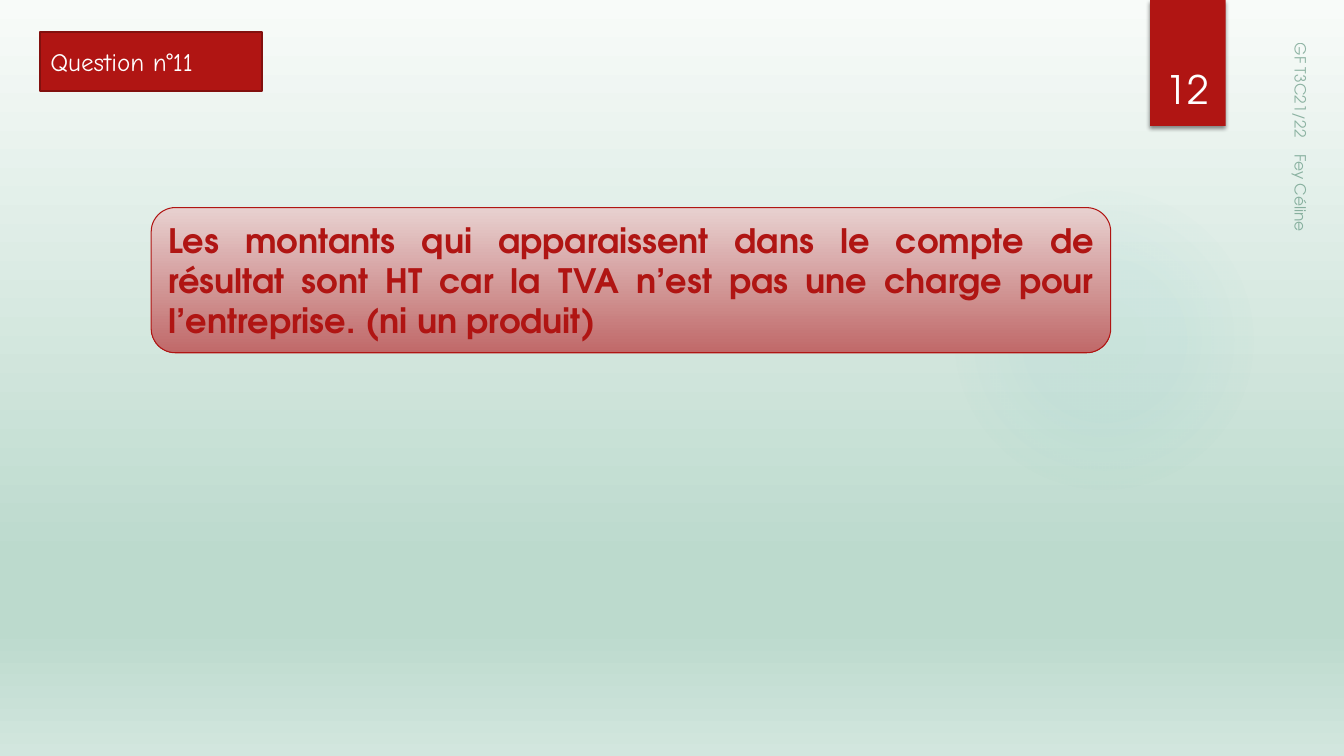
from lxml import etree
from pptx import Presentation
from pptx.dml.color import RGBColor
from pptx.enum.shapes import MSO_SHAPE
from pptx.enum.text import MSO_ANCHOR, MSO_AUTO_SIZE, PP_ALIGN
from pptx.oxml import parse_xml
from pptx.oxml.ns import nsdecls, qn
from pptx.util import Pt

ROUNDED, RECTANGLE, ELLIPSE = MSO_SHAPE.ROUNDED_RECTANGLE, MSO_SHAPE.RECTANGLE, MSO_SHAPE.OVAL
MIDDLE, BOTTOM = MSO_ANCHOR.MIDDLE, MSO_ANCHOR.BOTTOM
LEFT, CENTER, JUSTIFY = PP_ALIGN.LEFT, PP_ALIGN.CENTER, PP_ALIGN.JUSTIFY
NO_AUTOFIT = MSO_AUTO_SIZE.NONE

RED = RGBColor(0xB0, 0x15, 0x13)
DARK_RED = RGBColor(0x82, 0x10, 0x0E)
PALE_ROSE = RGBColor(0xE8, 0xD1, 0xD0)
ROSE = RGBColor(0xC0, 0x69, 0x69)
WHITE = RGBColor(0xFF, 0xFF, 0xFF)
BLACK = RGBColor(0, 0, 0)
MIST = RGBColor(0xF8, 0xFB, 0xF9)
SAGE = RGBColor(0xBC, 0xDA, 0xCD)
PALE_SAGE = RGBColor(0xD2, 0xE6, 0xDE)
TEAL = RGBColor(0x50, 0xB9, 0xC1)
GREEN = RGBColor(0x4B, 0x86, 0x6D)
TEXT_EDGE = RGBColor(0xA6, 0xCD, 0xBC)

BODY_FONT = "TeX Gyre Adventor"
LABEL_FONT = "Comic Neue"
DOWNWARD = '<a:lin ang="5400000" scaled="0"/>'
RADIAL = '<a:path path="circle"><a:fillToRect l="50000" t="50000" r="50000" b="50000"/></a:path>'


def color_xml(color, opacity=100):
    return f'<a:srgbClr val="{color}"><a:alpha val="{opacity * 1000}"/></a:srgbClr>'


def paint_gradient(fill, properties, stops, direction):
    fill.solid()
    stop_xml = "".join(
        f'<a:gs pos="{position * 1000}">{color_xml(color, opacity)}</a:gs>'
        for position, color, opacity in stops
    )
    gradient = parse_xml(
        f'<a:gradFill {nsdecls("a")} rotWithShape="1"><a:gsLst>{stop_xml}</a:gsLst>{direction}</a:gradFill>'
    )
    properties.replace(properties.find(qn("a:solidFill")), gradient)


def paint_background(slide):
    fill = slide.background.fill
    fill.solid()
    stops = [(0, MIST, 100), (74, SAGE, 100), (83, SAGE, 100), (100, PALE_SAGE, 100)]
    paint_gradient(fill, slide.element.find(".//" + qn("p:bgPr")), stops, DOWNWARD)


def place(element, left, top, width, height):
    element.left, element.top = Pt(left), Pt(top)
    element.width, element.height = Pt(width), Pt(height)


def set_outline(element, color, width):
    element.line.color.rgb = color
    element.line.width = Pt(width)


def add_panel(slide, preset, box):
    panel = slide.shapes.add_shape(preset, *map(Pt, box))
    panel.shadow.inherit = False
    panel.line.fill.background()
    return panel


def add_label(slide, box):
    return slide.shapes.add_textbox(*map(Pt, box))


def write(element, text, size, color, font=BODY_FONT, align=LEFT, anchor=MIDDLE, bold=False):
    frame = element.text_frame
    frame.word_wrap = True
    frame.auto_size = NO_AUTOFIT
    frame.vertical_anchor = anchor
    paragraph = frame.paragraphs[0]
    paragraph.alignment = align
    run = paragraph.add_run()
    run.text = text
    run.font.name = font
    run.font.size = Pt(size)
    run.font.bold = bold
    run.font.color.rgb = color
    return run


def add_glow(slide):
    glow = add_panel(slide, ELLIPSE, (677.5, 131.8, 221.8, 221.8))
    stops = [(0, TEAL, 7), (36, TEAL, 6), (69, TEAL, 0)]
    paint_gradient(glow.fill, glow.element.spPr, stops, RADIAL)


def add_page_ribbon(slide):
    ribbon = add_panel(slide, RECTANGLE, (821.5, 0, 54, 90))
    ribbon.fill.solid()
    ribbon.fill.fore_color.rgb = RED
    effects = ribbon.element.spPr.find(qn("a:effectLst"))
    effects.append(parse_xml(
        f'<a:outerShdw {nsdecls("a")} blurRad="{Pt(3)}" dist="{Pt(2)}" dir="5400000" '
        f'rotWithShape="0">{color_xml(BLACK, 45)}</a:outerShdw>'
    ))


def add_footer(slide):
    footer = add_label(slide, (779, 163.4, 303.8, 23.8))
    footer.rotation = 90
    properties = footer.text_frame.paragraphs[0]._p.get_or_add_pPr()
    tabs = etree.SubElement(properties, qn("a:tabLst"))
    etree.SubElement(tabs, qn("a:tab"), pos=str(Pt(79.5)), algn="l")
    run = write(footer, "GF T3C21/22\tFey Céline", 11, GREEN, anchor=BOTTOM)
    color = run._r.find(".//" + qn("a:srgbClr"))
    etree.SubElement(color, qn("a:alpha"), val="60000")


def add_page_number(slide):
    number = add_label(slide, (815, 23, 66.2, 60.5))
    write(number, "12", 28, WHITE, align=CENTER, anchor=BOTTOM)


def add_question_title(slide):
    question = slide.shapes.title
    place(question, 28.8, 23, 158.4, 41.8)
    question.element.spPr.append(
        parse_xml(f'<a:prstGeom {nsdecls("a")} prst="roundRect"><a:avLst/></a:prstGeom>')
    )
    question.fill.solid()
    question.fill.fore_color.rgb = RED
    set_outline(question, DARK_RED, 1.5)
    write(question, "Question n°11", 18, WHITE, font=LABEL_FONT)


def add_answer(slide):
    answer = add_panel(slide, ROUNDED, (108, 148.3, 685.4, 103.7))
    paint_gradient(answer.fill, answer.element.spPr, [(0, PALE_ROSE, 100), (100, ROSE, 100)], DOWNWARD)
    set_outline(answer, RED, 0.75)
    run = write(
        answer,
        "Les montants qui apparaissent dans le compte de résultat sont HT car la TVA "
        "n’est pas une charge pour l’entreprise. (ni un produit)",
        24, RED, align=JUSTIFY, bold=True,
    )
    run._r.get_or_add_rPr().insert(0, parse_xml(
        f'<a:ln {nsdecls("a")} w="{Pt(1.75)}"><a:solidFill>{color_xml(TEXT_EDGE)}</a:solidFill></a:ln>'
    ))


def main():
    presentation = Presentation()
    presentation.slide_width, presentation.slide_height = Pt(960), Pt(540)
    slide = presentation.slides.add_slide(presentation.slide_layouts[5])
    paint_background(slide)
    add_glow(slide)
    add_page_ribbon(slide)
    add_footer(slide)
    add_page_number(slide)
    add_question_title(slide)
    add_answer(slide)
    presentation.save("out.pptx")


if __name__ == "__main__":
    main()
